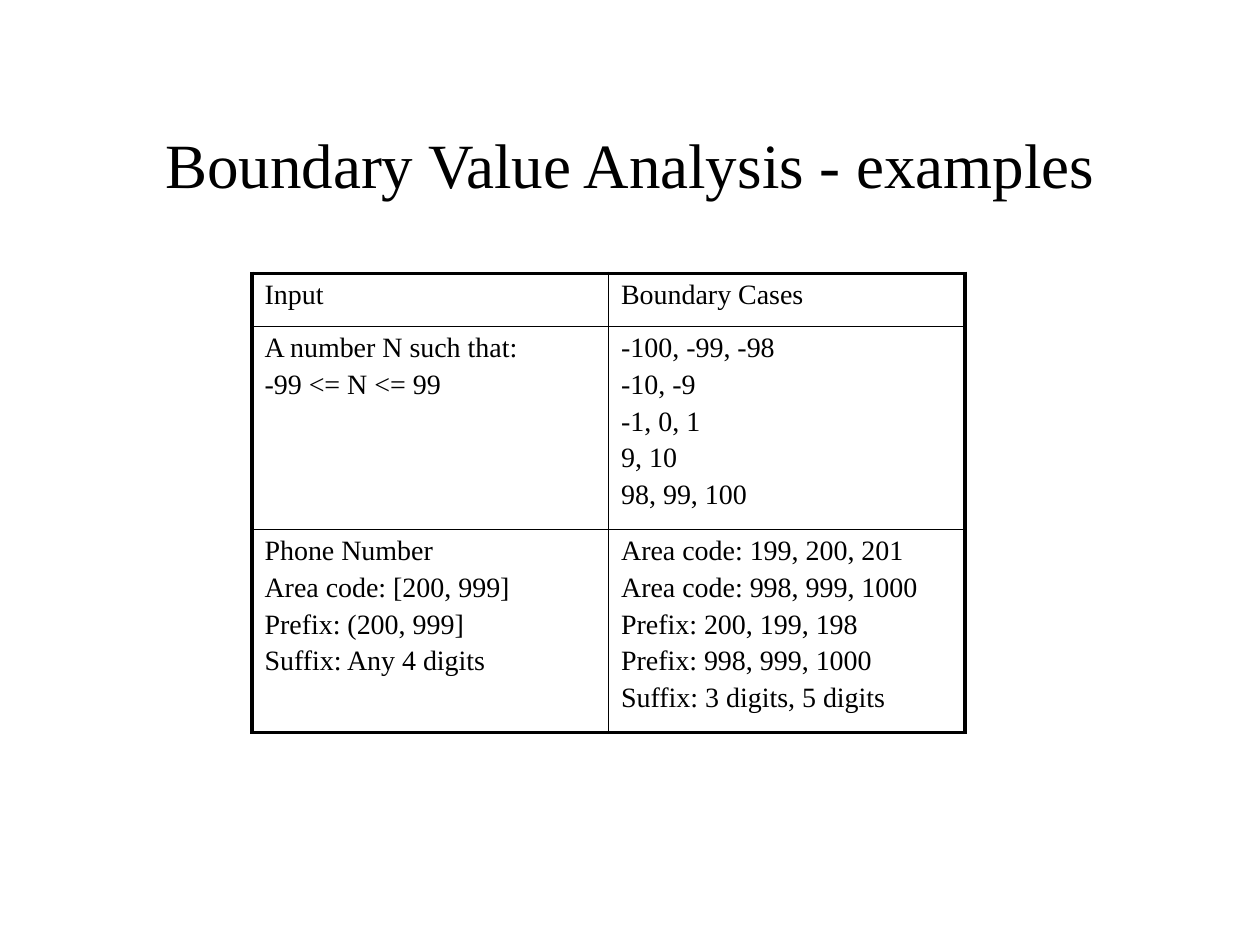
from pptx import Presentation
from pptx.dml.color import RGBColor
from pptx.enum.text import MSO_ANCHOR, PP_ALIGN
from pptx.oxml.ns import qn
from pptx.util import Inches, Pt
from lxml.etree import SubElement

COLORS = {"ink": "000000"}
FONT = "Times New Roman"
OUTER, INNER = 2.25, 1

ROWS = [
    (["Input"], ["Boundary Cases"]),
    (
        ["A number N such that:", "-99 <= N <= 99"],
        ["-100, -99, -98", "-10, -9", "-1, 0, 1", "9, 10", "98, 99, 100"],
    ),
    (
        ["Phone Number", "Area code: [200, 999]", "Prefix: (200, 999]",
         "Suffix: Any 4 digits"],
        ["Area code: 199, 200, 201", "Area code: 998, 999, 1000",
         "Prefix: 200, 199, 198", "Prefix: 998, 999, 1000",
         "Suffix: 3 digits, 5 digits"],
    ),
]
ROW_HEIGHTS = [0.42, 1.51, 1.51]
COLUMN_WIDTH = 2.83


def style(paragraph, size):
    paragraph.font.name = FONT
    paragraph.font.size = Pt(size)
    paragraph.font.color.rgb = RGBColor.from_string(COLORS["ink"])


def add_title(slide, text):
    title = slide.shapes.add_textbox(
        Inches(0.75), Inches(0.67), Inches(8.5), Inches(1.25))
    frame = title.text_frame
    frame.word_wrap = True
    frame.vertical_anchor = MSO_ANCHOR.MIDDLE
    heading = frame.paragraphs[0]
    heading.text = text
    heading.alignment = PP_ALIGN.CENTER
    style(heading, 36)


def set_borders(cell, widths):
    properties = cell._tc.get_or_add_tcPr()
    for side, width in widths.items():
        line = SubElement(properties, qn(f"a:ln{side}"), w=str(Pt(width)))
        fill = SubElement(line, qn("a:solidFill"))
        SubElement(fill, qn("a:srgbClr"), val=COLORS["ink"])


def fill_cell(cell, lines):
    cell.text = "\n".join(lines)
    for index, paragraph in enumerate(cell.text_frame.paragraphs):
        if index:
            paragraph.space_before = Pt(3.2)
        style(paragraph, 16)


def add_cases_table(slide):
    row_count, column_count = len(ROWS), len(ROWS[0])
    table = slide.shapes.add_table(
        row_count, column_count, Inches(2), Inches(2.17),
        Inches(COLUMN_WIDTH * column_count), Inches(sum(ROW_HEIGHTS))).table
    table.first_row = table.horz_banding = False
    for column in table.columns:
        column.width = Inches(COLUMN_WIDTH)
    for r, (row, height) in enumerate(zip(ROWS, ROW_HEIGHTS)):
        table.rows[r].height = Inches(height)
        for c, lines in enumerate(row):
            cell = table.cell(r, c)
            fill_cell(cell, lines)
            set_borders(cell, {
                "L": OUTER if c == 0 else INNER,
                "R": OUTER if c == column_count - 1 else INNER,
                "T": OUTER if r == 0 else INNER,
                "B": OUTER if r == row_count - 1 else INNER,
            })
            cell.fill.background()


def main():
    deck = Presentation()
    deck.slide_width, deck.slide_height = Inches(10), Inches(7.5)
    slide = deck.slides.add_slide(deck.slide_layouts[6])
    add_title(slide, "Boundary Value Analysis - examples")
    add_cases_table(slide)
    deck.save("out.pptx")


if __name__ == "__main__":
    main()
